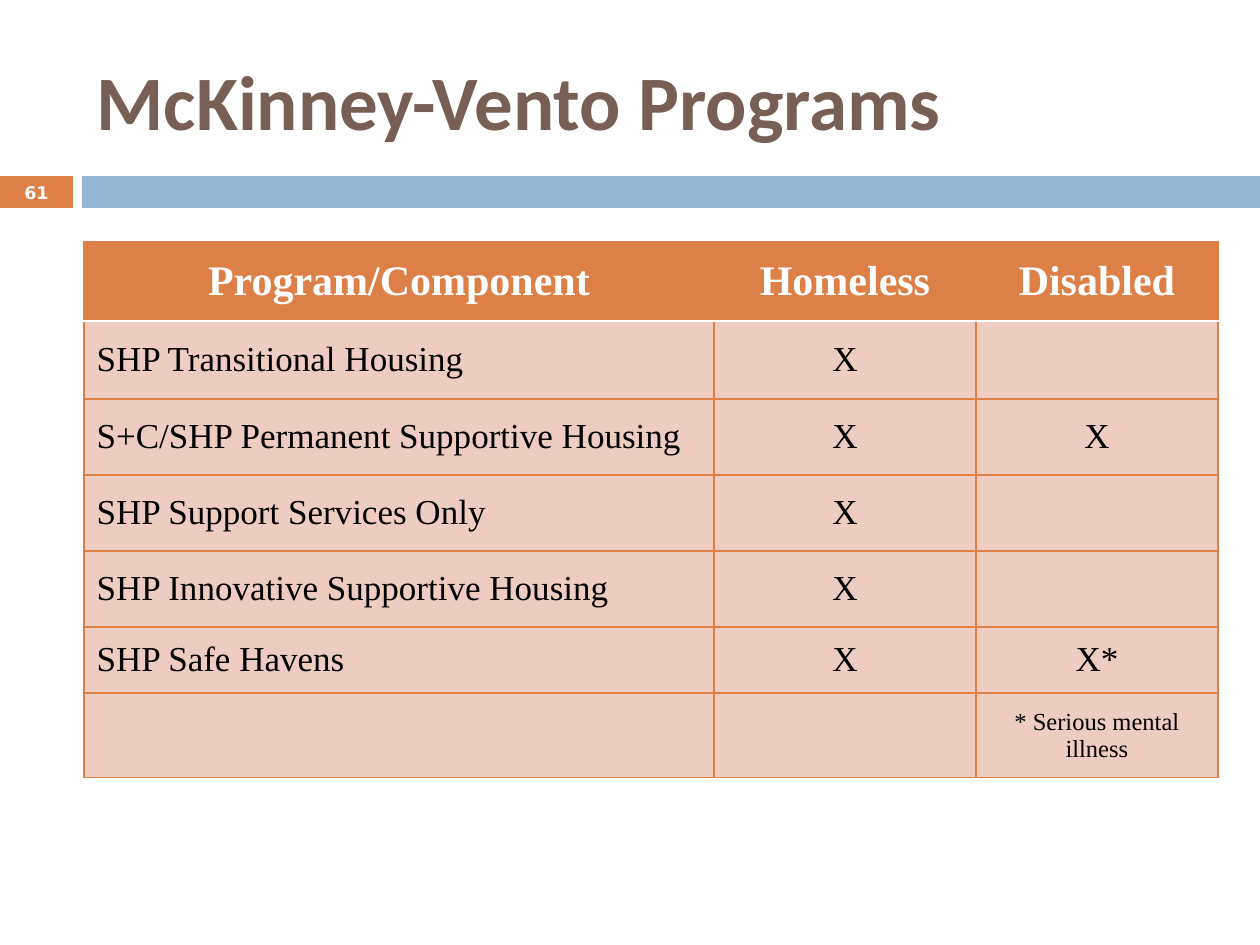
"""Build the McKinney-Vento programs slide with its eligibility table."""
from lxml.etree import SubElement
from pptx import Presentation
from pptx.dml.color import RGBColor
from pptx.enum.shapes import MSO_SHAPE
from pptx.enum.text import MSO_ANCHOR, PP_ALIGN
from pptx.oxml.ns import qn
from pptx.util import Emu, Pt

ORANGE = RGBColor(0xDD, 0x80, 0x47)
BLUE = RGBColor(0x94, 0xB6, 0xD2)
PINK = RGBColor(0xEF, 0xCC, 0xC1)
BROWN = RGBColor(0x77, 0x5F, 0x55)
WHITE = RGBColor(0xFF, 0xFF, 0xFF)
BLACK = RGBColor(0x00, 0x00, 0x00)

COLUMN_WIDTHS = [630, 262, 242]
ROW_HEIGHTS = [79, 78, 76, 76, 76, 66, 85]
ROWS = [
    ["Program/Component", "Homeless", "Disabled"],
    ["SHP Transitional Housing", "X", ""],
    ["S+C/SHP Permanent Supportive Housing", "X", "X"],
    ["SHP Support Services Only", "X", ""],
    ["SHP Innovative Supportive Housing", "X", ""],
    ["SHP Safe Havens", "X", "X*"],
    ["", "", "* Serious mental illness"],
]


def px(*lengths):
    return [Emu(length * 914400 // 126) for length in lengths]


def set_border(cell, side, color, width):
    line = SubElement(cell._tc.get_or_add_tcPr(), qn(f"a:{side}"), w=str(Pt(width)))
    SubElement(SubElement(line, qn("a:solidFill")), qn("a:srgbClr"), val=str(color))


deck = Presentation()
deck.slide_width, deck.slide_height = px(1260, 945)
page = deck.slides.add_slide(deck.slide_layouts[5])

for left, width, color in [(0, 73, ORANGE), (82, 1178, BLUE)]:
    band = page.shapes.add_shape(MSO_SHAPE.RECTANGLE, *px(left, 176, width, 32))
    band.shadow.inherit = False
    band.fill.solid()
    band.fill.fore_color.rgb = color
    band.line.fill.background()

title = page.shapes.title
title.left, title.top, title.width, title.height = px(84, 21, 1071, 158)
title.text_frame.text = "McKinney-Vento Programs"
title.text_frame.vertical_anchor = MSO_ANCHOR.MIDDLE
para = title.text_frame.paragraphs[0]
para.alignment = PP_ALIGN.LEFT
para.font.name = "Calibri"
para.font.size = Pt(44)
para.font.bold = True
para.font.color.rgb = BROWN

frame = page.shapes.add_table(
    len(ROWS), len(COLUMN_WIDTHS), *px(84, 242, sum(COLUMN_WIDTHS), sum(ROW_HEIGHTS))
)
table = frame.table
for column, width in zip(table.columns, px(*COLUMN_WIDTHS)):
    column.width = width
for row, height in zip(table.rows, px(*ROW_HEIGHTS)):
    row.height = height

for row_index, texts in enumerate(ROWS):
    header = row_index == 0
    for column_index, text in enumerate(texts):
        cell = table.cell(row_index, column_index)
        cell.vertical_anchor = MSO_ANCHOR.MIDDLE
        for side in ("lnL", "lnR", "lnT", "lnB"):
            under_header = (row_index, side) in [(0, "lnB"), (1, "lnT")]
            set_border(cell, side, *((WHITE, 1.5) if under_header else (ORANGE, 0.79)))
        cell.fill.solid()
        cell.fill.fore_color.rgb = ORANGE if header else PINK
        cell.text = text
        para = cell.text_frame.paragraphs[0]
        centred = header or column_index > 0
        para.alignment = PP_ALIGN.CENTER if centred else PP_ALIGN.LEFT
        para.font.name = "Times New Roman"
        para.font.size = Pt(24 if header else 14 if text.startswith("*") else 20)
        para.font.bold = header
        para.font.color.rgb = WHITE if header else BLACK

number = page.shapes.add_textbox(*px(0, 175, 73, 34)).text_frame
number.word_wrap = True
number.vertical_anchor = MSO_ANCHOR.MIDDLE
number.margin_top = number.margin_bottom = 0
number.text = "61"
para = number.paragraphs[0]
para.alignment = PP_ALIGN.CENTER
para.font.name = "DejaVu Sans"
para.font.size = Pt(10)
para.font.bold = True
para.font.color.rgb = WHITE

deck.save("out.pptx")
